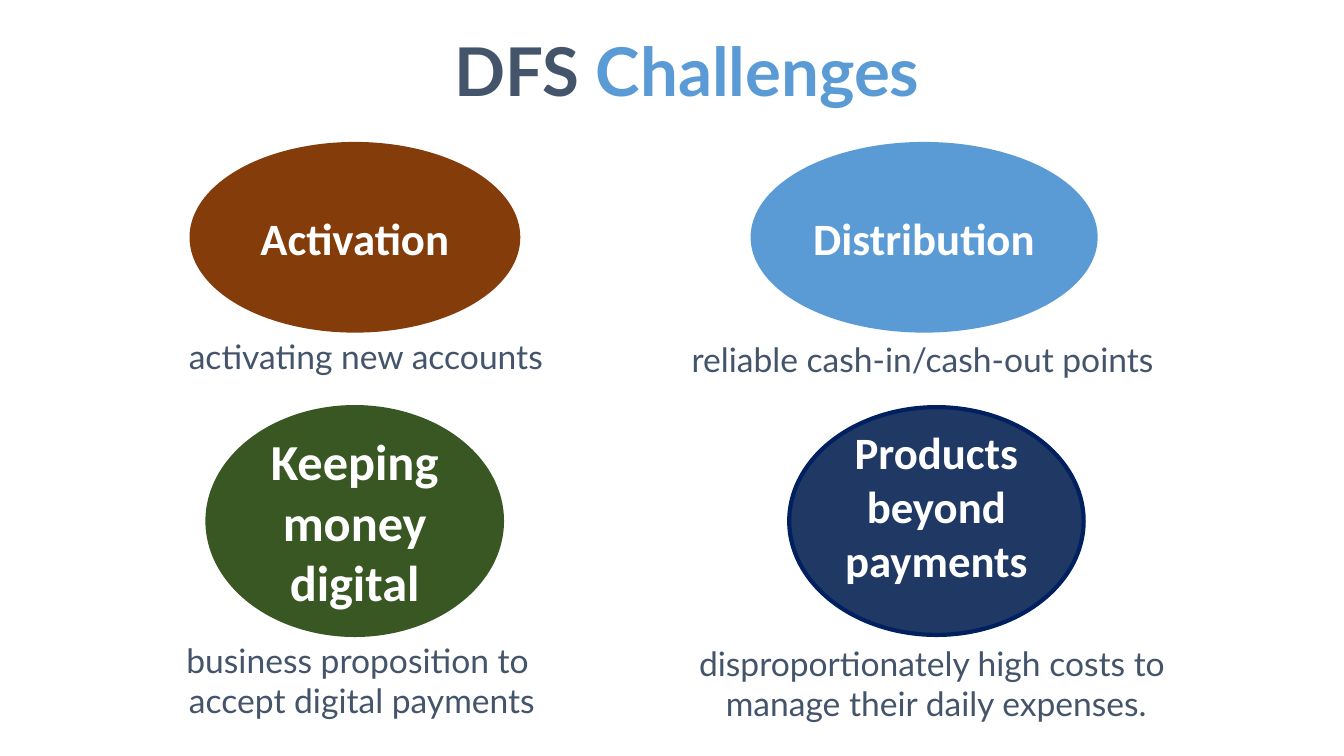
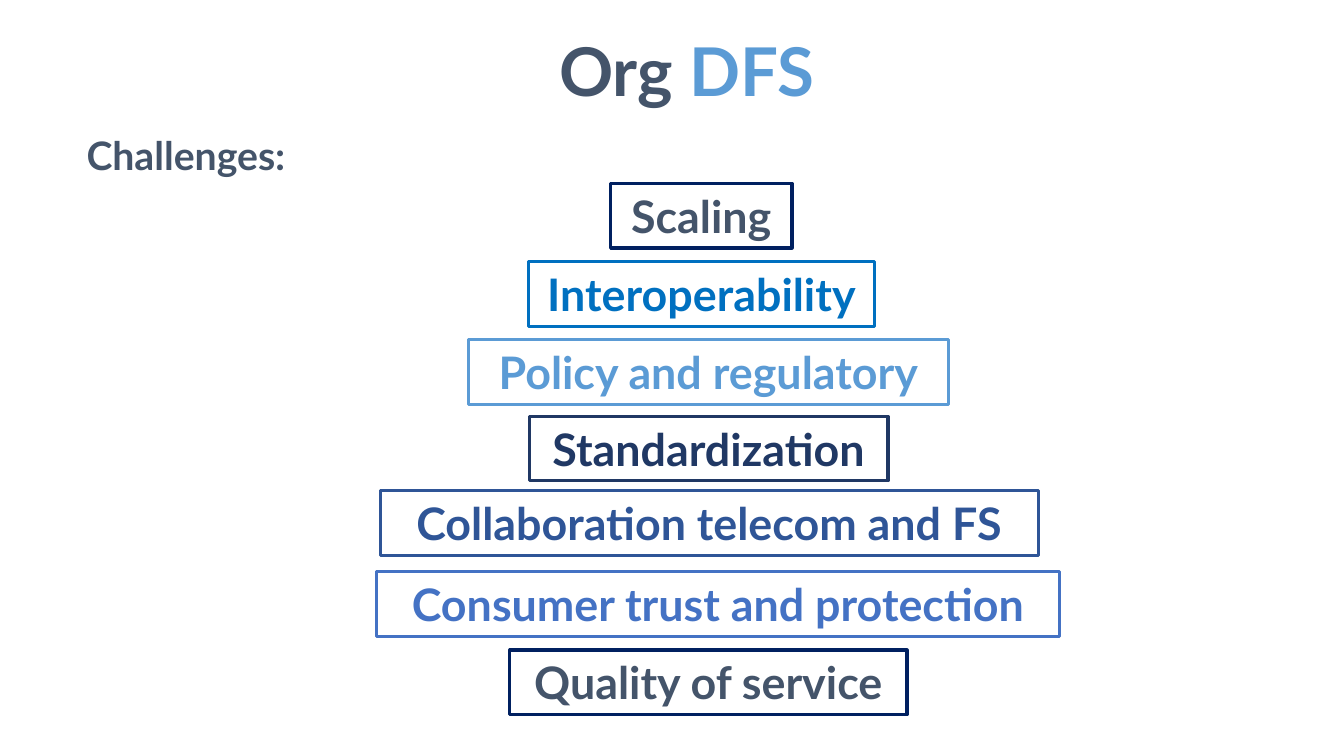
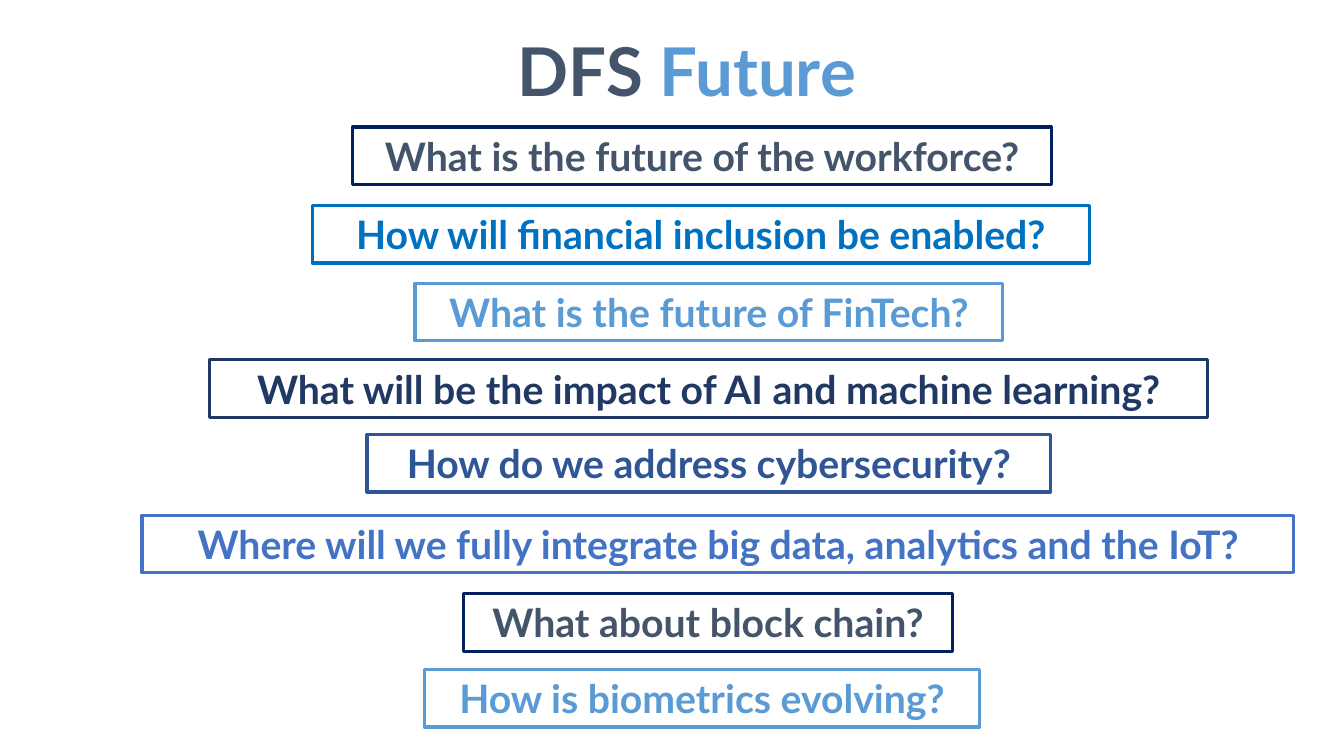
from pptx import Presentation
from pptx.dml.color import RGBColor
from pptx.enum.shapes import MSO_SHAPE
from pptx.enum.text import MSO_ANCHOR, MSO_AUTO_SIZE, PP_ALIGN
from pptx.util import Cm, Pt

OVAL, RECTANGLE = MSO_SHAPE.OVAL, MSO_SHAPE.RECTANGLE
TOP, MIDDLE = MSO_ANCHOR.TOP, MSO_ANCHOR.MIDDLE
CENTER = PP_ALIGN.CENTER
NO_AUTOSIZE = MSO_AUTO_SIZE.NONE

COLORS = {
    "slate": "44546A",
    "sky": "5B9BD5",
    "bright": "0070C0",
    "navy": "002060",
    "dark": "203864",
    "royal": "2F5597",
    "blue": "4472C4",
    "brown": "843C0B",
    "green": "385723",
    "white": "FFFFFF",
}
TITLE_ONLY = 5

# Rhythm shared by both box lists: offset from the first row, outline, text
LIST_ROWS = [
    (0, "navy", "slate"),
    (1.98, "bright", "bright"),
    (3.94, "sky", "sky"),
    (5.87, "dark", "dark"),
    (7.75, "royal", "royal"),
    (9.78, "blue", "blue"),
    (11.76, "navy", "slate"),
    (13.67, "sky", "sky"),
]

# Ovals: text, left, top, width, height, fill, outline, size, bottom inset
OVALS = [
    ("Activation", 4.83, 3.63, 8.23, 4.7, "brown", "brown", 32, 0.13),
    ("Distribution", 18.97, 3.63, 8.64, 4.7, "sky", "sky", 32, 0.13),
    ("Products beyond payments", 19.89, 10.26, 7.42, 5.74, "dark", "navy", 32, 0.89),
    ("Keeping money digital", 5.23, 10.26, 7.42, 5.74, "green", "green", 36, 0.13),
]

# Captions: text, left, top, width, height
CAPTIONS = [
    ("activating new accounts", 4.42, 8.33, 9.6, 1.27),
    ("reliable cash-in/cash-out points", 17.09, 8.41, 12.32, 1.27),
    ("business proposition to \naccept digital payments", 4.37, 16, 9.5, 2.31),
    ("disproportionately high costs to \nmanage their daily expenses.",
     17.32, 16.08, 12.55, 2.31),
]

# Box lists: text, left, width
CHALLENGES = [
    ("Scaling", 15.39, 4.57),
    ("Interoperability", 13.31, 8.74),
    ("Policy and regulatory", 11.81, 12.09),
    ("Standardization", 13.34, 9.04),
    ("Collaboration telecom and FS", 9.58, 16.59),
    ("Consumer trust and protection", 9.5, 17.2),
    ("Quality of service", 12.85, 10.01),
]
QUESTIONS = [
    ("What is the future of the workforce?", 8.89, 17.6),
    ("How will financial inclusion be enabled?", 7.87, 19.58),
    ("What is the future of FinTech?", 10.46, 14.81),
    ("What will be the impact of AI and machine learning?", 5.28, 25.15),
    ("How do we address cybersecurity?", 9.25, 17.22),
    ("Where will we fully integrate big data, analytics and the IoT?", 3.58, 29.03),
    ("What about block chain?", 11.68, 12.32),
    ("How is biometrics evolving?", 10.69, 14),
]


def rgb(name):
    return RGBColor.from_string(COLORS[name])


def add_text(paragraph, text, *, size, color="slate", font="Lato", bold=True):
    paragraph.alignment = CENTER
    run = paragraph.add_run()
    run.text = text
    run.font.name = font
    run.font.size = Pt(size)
    run.font.bold = bold
    run.font.color.rgb = rgb(color)


def prepare_frame(shape, wrap=False, anchor=TOP):
    frame = shape.text_frame
    frame.auto_size = NO_AUTOSIZE
    frame.word_wrap = wrap
    frame.vertical_anchor = anchor
    return frame


def add_titled_slide(presentation, first, second):
    """Add a slide with the two-tone title."""
    slide = presentation.slides.add_slide(presentation.slide_layouts[TITLE_ONLY])
    title = slide.shapes.title
    title.left, title.top = Cm(10.51), Cm(0.61)
    title.width, title.height = Cm(13.6), Cm(2.31)
    paragraph = prepare_frame(title).paragraphs[0]
    add_text(paragraph, first + " ", size=48)
    add_text(paragraph, second, size=48, color="sky")
    return slide


def add_label(slide, text, left, top, width, height, **text_format):
    label = slide.shapes.add_textbox(Cm(left), Cm(top), Cm(width), Cm(height))
    frame = prepare_frame(label)
    for index, line in enumerate(text.split("\n")):
        paragraph = frame.add_paragraph() if index else frame.paragraphs[0]
        add_text(paragraph, line, **text_format)


def add_outlined(slide, kind, left, top, width, height, outline, weight, fill=None):
    shape = slide.shapes.add_shape(kind, Cm(left), Cm(top), Cm(width), Cm(height))
    shape.shadow.inherit = False
    shape.line.color.rgb = rgb(outline)
    shape.line.width = Pt(weight)
    if fill:
        shape.fill.solid()
        shape.fill.fore_color.rgb = rgb(fill)
    else:
        shape.fill.background()
    return shape


def add_oval(slide, text, left, top, width, height, fill, outline, size, inset):
    oval = add_outlined(slide, OVAL, left, top, width, height, outline, 3, fill)
    frame = prepare_frame(oval, wrap=True, anchor=MIDDLE)
    frame.margin_bottom = Cm(inset)
    add_text(frame.paragraphs[0], text, size=size, color="white", font="Calibri")


def add_box_list(slide, items, first_top, height, size):
    for (text, left, width), (offset, outline, color) in zip(items, LIST_ROWS):
        box = add_outlined(slide, RECTANGLE, left, first_top + offset,
                           width, height, outline, 2.25)
        add_text(prepare_frame(box).paragraphs[0], text, size=size, color=color)


def main():
    presentation = Presentation()
    presentation.slide_width, presentation.slide_height = Cm(33.87), Cm(19.05)

    # Four challenges
    slide = add_titled_slide(presentation, "DFS", "Challenges")
    for caption in CAPTIONS:
        add_label(slide, *caption, size=24, bold=False)
    for oval in OVALS:
        add_oval(slide, *oval)

    # Challenge list
    slide = add_titled_slide(presentation, "Org", "DFS")
    add_label(slide, "Challenges:", 1.6, 3.18, 6.17, 1.45, size=28)
    add_box_list(slide, CHALLENGES, first_top=4.62, height=1.63, size=32)

    # Open questions
    slide = add_titled_slide(presentation, "DFS", "Future")
    add_box_list(slide, QUESTIONS, first_top=3.2, height=1.45, size=28)

    presentation.save("out.pptx")


if __name__ == "__main__":
    main()
